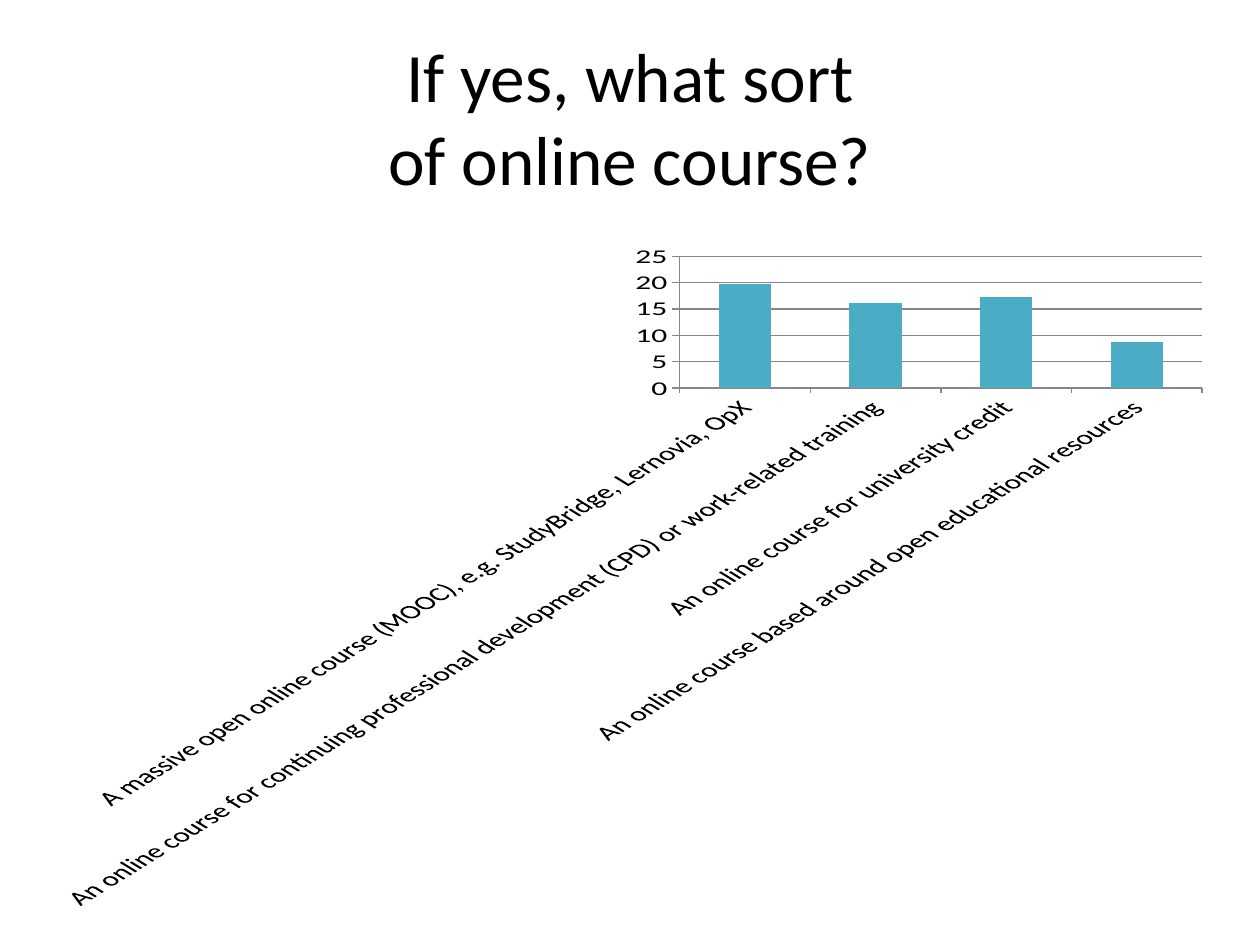
from pptx import Presentation
from pptx.chart.data import CategoryChartData
from pptx.dml.color import RGBColor
from pptx.enum.chart import XL_CHART_TYPE as ChartType, XL_TICK_MARK as TickMark
from pptx.enum.text import MSO_ANCHOR as Anchor, PP_ALIGN as Align
from pptx.util import Inches, Pt

FONT = "Calibri"
BLACK, GREY, TEAL = "000000", "878787", "4BACC6"

RESPONSES = {
    "A massive open online course (MOOC), e.g. StudyBridge, Lernovia, OpX": 19.8,
    "An online course for continuing professional development (CPD) or work-related training": 16.2,
    "An online course for university credit": 17.2,
    "An online course based around open educational resources": 8.8,
}


def color(hex_string):
    return RGBColor.from_string(hex_string)


def format_font(font, size, hex_string=BLACK):
    font.name = FONT
    font.size = Pt(size)
    font.color.rgb = color(hex_string)


def add_text(slide, text, box, size, align=Align.CENTER, anchor=Anchor.MIDDLE):
    shape = slide.shapes.add_textbox(*map(Inches, box))
    frame = shape.text_frame
    frame.word_wrap = True
    frame.vertical_anchor = anchor
    paragraph = frame.paragraphs[0]
    paragraph.text = text
    paragraph.alignment = align
    for run in paragraph.runs:
        format_font(run.font, size)


def format_axis(axis):
    axis.major_tick_mark = TickMark.OUTSIDE
    axis.minor_tick_mark = TickMark.NONE
    axis.format.line.color.rgb = color(GREY)


def add_course_chart(slide, box):
    data = CategoryChartData(number_format="0.0")
    data.categories = list(RESPONSES)
    data.add_series("Series 1", list(RESPONSES.values()))
    chart = slide.shapes.add_chart(
        ChartType.COLUMN_STACKED, *map(Inches, box), data).chart
    chart.has_legend = False
    chart.has_title = False
    format_font(chart.font, 18)

    # Columns
    plot = chart.plots[0]
    plot.vary_by_categories = False
    plot.gap_width = 150
    plot.overlap = 100
    fill = plot.series[0].format.fill
    fill.solid()
    fill.fore_color.rgb = color(TEAL)

    # Category axis with slanted labels
    category_axis = chart.category_axis
    format_axis(category_axis)
    format_font(category_axis.tick_labels.font, 18)
    body = category_axis._element.txPr.bodyPr
    body.set("rot", "-2700000")
    body.set("vert", "horz")

    # Value axis with gridlines
    value_axis = chart.value_axis
    format_axis(value_axis)
    value_axis.has_major_gridlines = True
    value_axis.major_gridlines.format.line.color.rgb = color(GREY)
    value_axis.tick_labels.number_format = "0"
    value_axis.tick_labels.number_format_is_linked = False


def main():
    presentation = Presentation()
    presentation.slide_width = Inches(10)
    presentation.slide_height = Inches(7.5)
    slide = presentation.slides.add_slide(presentation.slide_layouts[6])
    add_text(slide, "If yes, what sort\vof online course?", (0.5, 0.3, 9, 1.25), 39.6)
    add_course_chart(slide, (0.28, 1.94, 9.45, 5.28))
    presentation.save("out.pptx")


if __name__ == "__main__":
    main()
